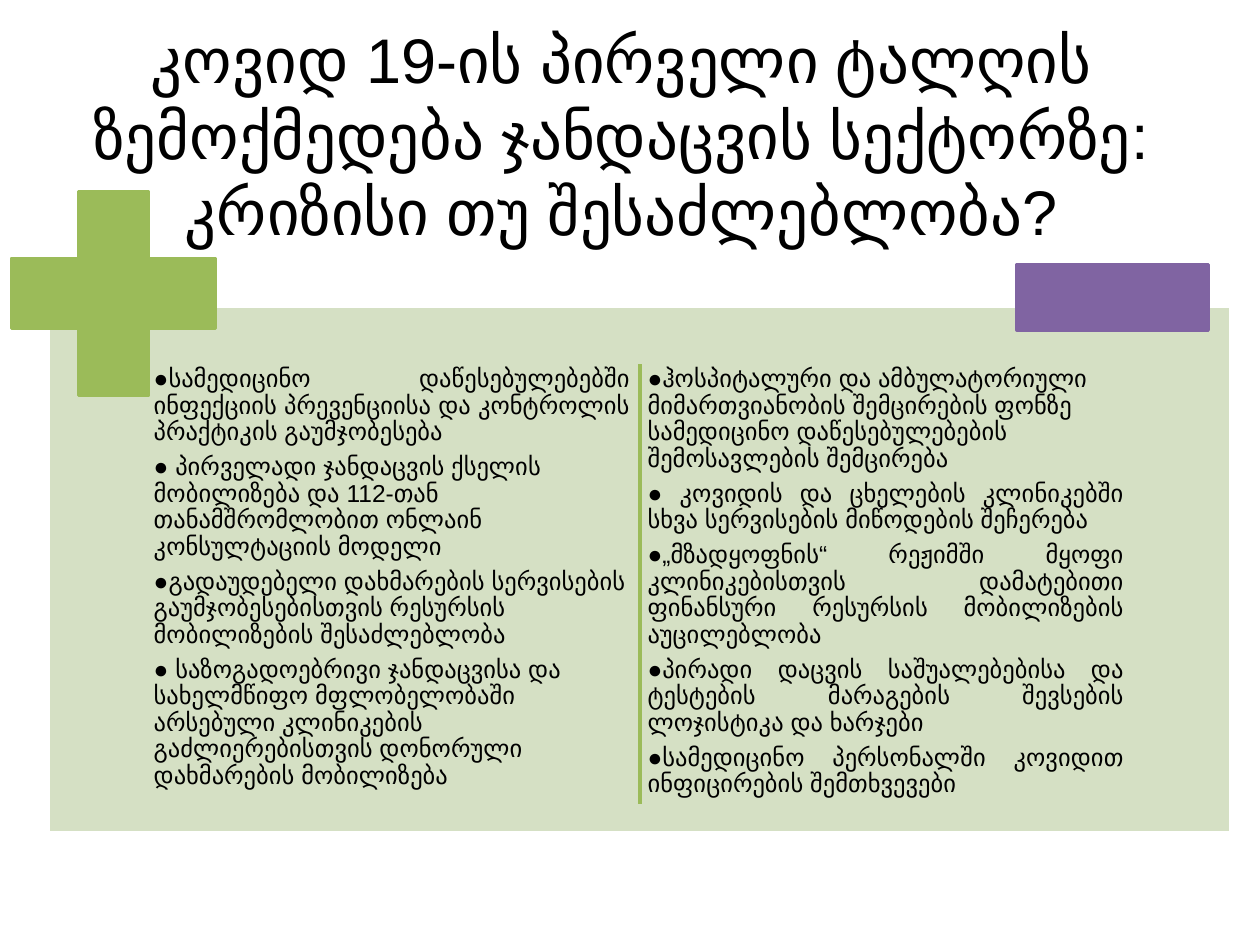
from dataclasses import dataclass

from lxml import etree
from pptx import Presentation
from pptx.dml.color import RGBColor
from pptx.enum import shapes, text
from pptx.oxml.ns import qn
from pptx.slide import Slide
from pptx.util import Inches, Pt

COLORS = {
    "panel": "D5E0C4",
    "plus": "9BBB59",
    "minus": "8064A2",
    "edge": "FFFFFF",
    "ink": "000000",
}
LEFT, JUSTIFY, CENTER = text.PP_ALIGN.LEFT, text.PP_ALIGN.JUSTIFY, text.PP_ALIGN.CENTER

TITLE = "კოვიდ 19-ის პირველი ტალღის ზემოქმედება ჯანდაცვის სექტორზე: კრიზისი თუ შესაძლებლობა?"
OPPORTUNITIES = [
    (JUSTIFY, "●სამედიცინო დაწესებულებებში ინფექციის პრევენციისა და კონტროლის პრაქტიკის გაუმჯობესება"),
    (LEFT, "● პირველადი ჯანდაცვის ქსელის მობილიზება და 112-თან თანამშრომლობით ონლაინ კონსულტაციის მოდელი"),
    (LEFT, "●გადაუდებელი დახმარების სერვისების გაუმჯობესებისთვის რესურსის მობილიზების შესაძლებლობა"),
    (LEFT, "● საზოგადოებრივი ჯანდაცვისა და სახელმწიფო მფლობელობაში არსებული კლინიკების "
           "გაძლიერებისთვის დონორული დახმარების მობილიზება"),
]
CHALLENGES = [
    (LEFT, "●ჰოსპიტალური და ამბულატორიული მიმართვიანობის შემცირების ფონზე სამედიცინო "
           "დაწესებულებების შემოსავლების შემცირება"),
    (JUSTIFY, "● კოვიდის და ცხელების კლინიკებში სხვა სერვისების მიწოდების შეჩერება"),
    (JUSTIFY, "●„მზადყოფნის“ რეჟიმში მყოფი კლინიკებისთვის დამატებითი ფინანსური რესურსის "
              "მობილიზების აუცილებლობა"),
    (JUSTIFY, "●პირადი დაცვის საშუალებებისა და ტესტების მარაგების შევსების ლოჯისტიკა და ხარჯები"),
    (JUSTIFY, "●სამედიცინო პერსონალში კოვიდით ინფიცირების შემთხვევები"),
]


def color(name):
    return RGBColor.from_string(COLORS[name])


@dataclass
class Painter:
    slide: Slide
    font: str = "Arial"
    line_width: float = 2

    def shape(self, kind, box, fill, edge):
        figure = self.slide.shapes.add_shape(kind, *map(Inches, box))
        figure.shadow.inherit = False
        figure.fill.solid()
        figure.fill.fore_color.rgb = color(fill)
        figure.line.color.rgb = color(edge)
        figure.line.width = Pt(self.line_width)
        return figure

    def text(self, box, paragraphs, size, inset, anchor, spacing=1.0, after=0):
        frame = self.slide.shapes.add_textbox(*map(Inches, box)).text_frame
        frame.word_wrap = True
        frame.vertical_anchor = anchor
        frame.margin_left = frame.margin_right = Inches(inset[0])
        frame.margin_top = frame.margin_bottom = Inches(inset[1])
        for index, (alignment, words) in enumerate(paragraphs):
            paragraph = frame.add_paragraph() if index else frame.paragraphs[0]
            paragraph.text = words
            paragraph.alignment = alignment
            paragraph.line_spacing = spacing
            paragraph.space_after = Pt(after)
            paragraph.font.name = self.font
            paragraph.font.size = Pt(size)
            paragraph.font.color.rgb = color("ink")

    def line(self, start, end, stroke):
        rule = self.slide.shapes.add_connector(
            shapes.MSO_CONNECTOR.STRAIGHT, *map(Inches, start + end))
        rule.line.color.rgb = color(stroke)
        rule.line.width = Pt(self.line_width)
        etree.SubElement(rule._element.spPr, qn("a:effectLst"))


def main():
    deck = Presentation()
    deck.slide_width, deck.slide_height = Inches(10), Inches(7.5)
    painter = Painter(deck.slides.add_slide(deck.slide_layouts[6]))
    rectangle = shapes.MSO_SHAPE.RECTANGLE

    painter.text((0.62, 0.12, 8.62, 1.89), [(CENTER, TITLE)], 36, (0.1, 0.05),
                 text.MSO_ANCHOR.MIDDLE)
    painter.shape(rectangle, (0.38, 2.43, 9.39, 4.18), "panel", "edge")
    for left, points in ((1.19, OPPORTUNITIES), (5.11, CHALLENGES)):
        painter.text((left, 2.88, 3.84, 3.66), points, 14, (0.03, 0.03),
                     text.MSO_ANCHOR.TOP, spacing=0.9, after=4.9)
    plus = painter.shape(shapes.MSO_SHAPE.CROSS, (0.09, 1.52, 1.62, 1.62), "plus", "plus")
    plus.adjustments[0] = 0.33
    painter.shape(rectangle, (8.07, 2.1, 1.52, 0.52), "minus", "minus")
    painter.line((5.08, 2.89), (5.08, 6.38), "plus")

    deck.save("out.pptx")


if __name__ == "__main__":
    main()
